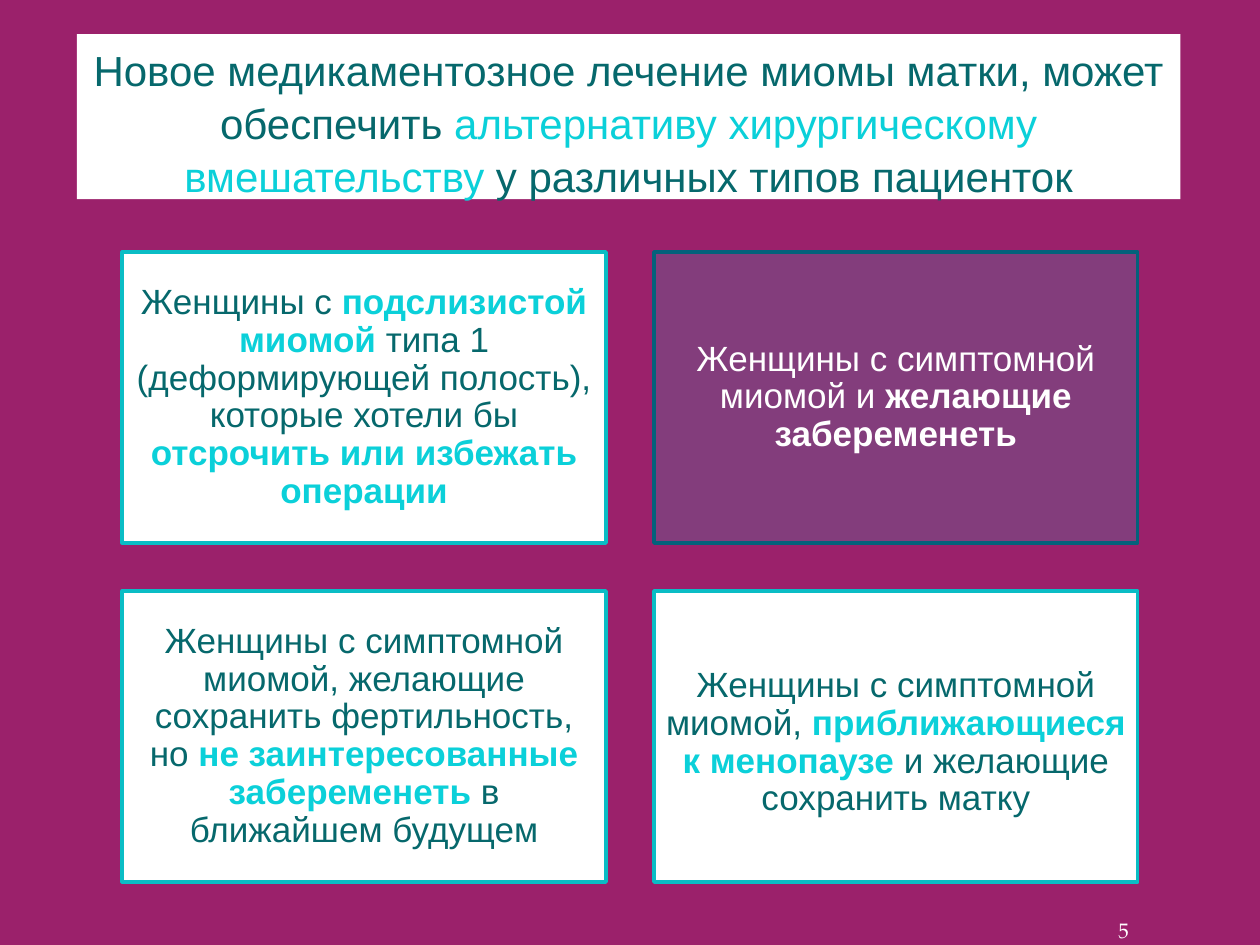
import pptx
import pptx.dml.color
import pptx.enum.shapes
import pptx.enum.text
import pptx.oxml
import pptx.oxml.ns
import pptx.util

Inches = pptx.util.Inches
Pt = pptx.util.Pt
ALIGN = pptx.enum.text.PP_ALIGN

COLORS = {
    "background": "9B216B",
    "white": "FFFFFF",
    "teal": "06686C",
    "accent": "0BD0D9",
    "border": "0ABDC5",
    "dark_border": "04617B",
}

# Each run is (text, colour, bold)
TITLE = [
    ("Новое медикаментозное лечение миомы матки, может обеспечить ", "teal", False),
    ("альтернативу хирургическому вмешательству", "accent", False),
    (" у различных типов пациенток", "teal", False),
]
LIGHT = {"fill": "white", "line": "border", "alpha": None}
TINTED = {"fill": "accent", "line": "dark_border", "alpha": 16}
CARDS = [
    (LIGHT, 0.08, [
        ("Женщины с ", "teal", False),
        ("подслизистой миомой ", "accent", True),
        ("типа 1 (деформирующей полость), которые хотели бы ", "teal", False),
        ("отсрочить или избежать операции", "accent", True),
    ]),
    (TINTED, 0.08, [
        ("Женщины с симптомной миомой и ", "white", False),
        ("желающие забеременеть", "white", True),
    ]),
    (LIGHT, 0.08, [
        ("Женщины с симптомной миомой, желающие сохранить фертильность, но ", "teal", False),
        ("не заинтересованные забеременеть ", "accent", True),
        ("в ближайшем будущем", "teal", False),
    ]),
    # The last text sits slightly below the middle of its card
    (LIGHT, 0.18, [
        ("Женщины с симптомной миомой, ", "teal", False),
        ("приближающиеся к менопаузе ", "accent", True),
        ("и желающие сохранить матку", "teal", False),
    ]),
]


def rgb(name):
    return pptx.dml.color.RGBColor.from_string(COLORS[name])


def set_attributes(target, values):
    for name, value in values.items():
        setattr(target, name, value)


def write_runs(shape, runs, size, frame_format, paragraph_format, font="Arial"):
    frame = shape.text_frame
    set_attributes(frame, {
        "word_wrap": True,
        "vertical_anchor": pptx.enum.text.MSO_ANCHOR.MIDDLE,
        **frame_format,
    })
    paragraph = frame.paragraphs[0]
    set_attributes(paragraph, paragraph_format)
    for text, color, bold in runs:
        run = paragraph.add_run()
        run.text = text
        set_attributes(run.font, {"name": font, "size": Pt(size), "bold": bold})
        run.font.color.rgb = rgb(color)


def add_panel(slide, box, fill, line=None, alpha=None):
    panel = slide.shapes.add_shape(pptx.enum.shapes.MSO_SHAPE.RECTANGLE, *box)
    panel.shadow.inherit = False
    panel.fill.solid()
    panel.fill.fore_color.rgb = rgb(fill)
    if alpha is not None:
        color = panel.fill._xPr.find(".//" + pptx.oxml.ns.qn("a:srgbClr"))
        opacity = pptx.oxml.parse_xml(
            f'<a:alpha {pptx.oxml.ns.nsdecls("a")} val="{alpha * 1000}"/>')
        color.append(opacity)
    if line:
        panel.line.color.rgb = rgb(line)
        panel.line.width = Pt(2)
    else:
        panel.line.fill.background()
    return panel


def add_title(slide, box):
    title = add_panel(slide, box, "white")
    insets = {"margin_left": 0, "margin_right": 0,
              "margin_top": Inches(0.08), "margin_bottom": 0}
    write_runs(title, TITLE, 24, insets,
               {"alignment": ALIGN.CENTER, "line_spacing": 1.05})


def add_cards(slide, box, columns=2, gap=0.38):
    left, top, width, height = box
    rows = len(CARDS) // columns
    gap = Inches(gap)
    card_width = (width - gap * (columns - 1)) // columns
    card_height = (height - gap * (rows - 1)) // rows
    for index, (style, top_inset, runs) in enumerate(CARDS):
        row, column = divmod(index, columns)
        card = add_panel(slide, (left + column * (card_width + gap),
                                 top + row * (card_height + gap),
                                 card_width, card_height), **style)
        insets = {f"margin_{side}": Inches(0.08) for side in ("left", "right", "bottom")}
        insets["margin_top"] = Inches(top_inset)
        write_runs(card, runs, 20, insets,
                   {"alignment": ALIGN.CENTER, "line_spacing": 0.9})


def add_page_number(slide, box):
    number = slide.shapes.add_textbox(*box)
    insets = {f"margin_{side}": 0 for side in ("left", "right", "top", "bottom")}
    write_runs(number, [("5", "white", False)], 12, insets,
               {"alignment": ALIGN.RIGHT}, font="TeX Gyre Pagella")


def main():
    deck = pptx.Presentation()
    deck.slide_width, deck.slide_height = Inches(10), Inches(7.5)
    slide = deck.slides.add_slide(deck.slide_layouts[6])
    slide.background.fill.solid()
    slide.background.fill.fore_color.rgb = rgb("background")

    # Heading, patient groups, page number
    add_title(slide, [Inches(v) for v in (0.61, 0.27, 8.76, 1.31)])
    add_cards(slide, [Inches(v) for v in (0.97, 2, 8.06, 5)])
    add_page_number(slide, [Inches(v) for v in (8.46, 7.27, 0.5, 0.23)])

    deck.save("out.pptx")


if __name__ == "__main__":
    main()
